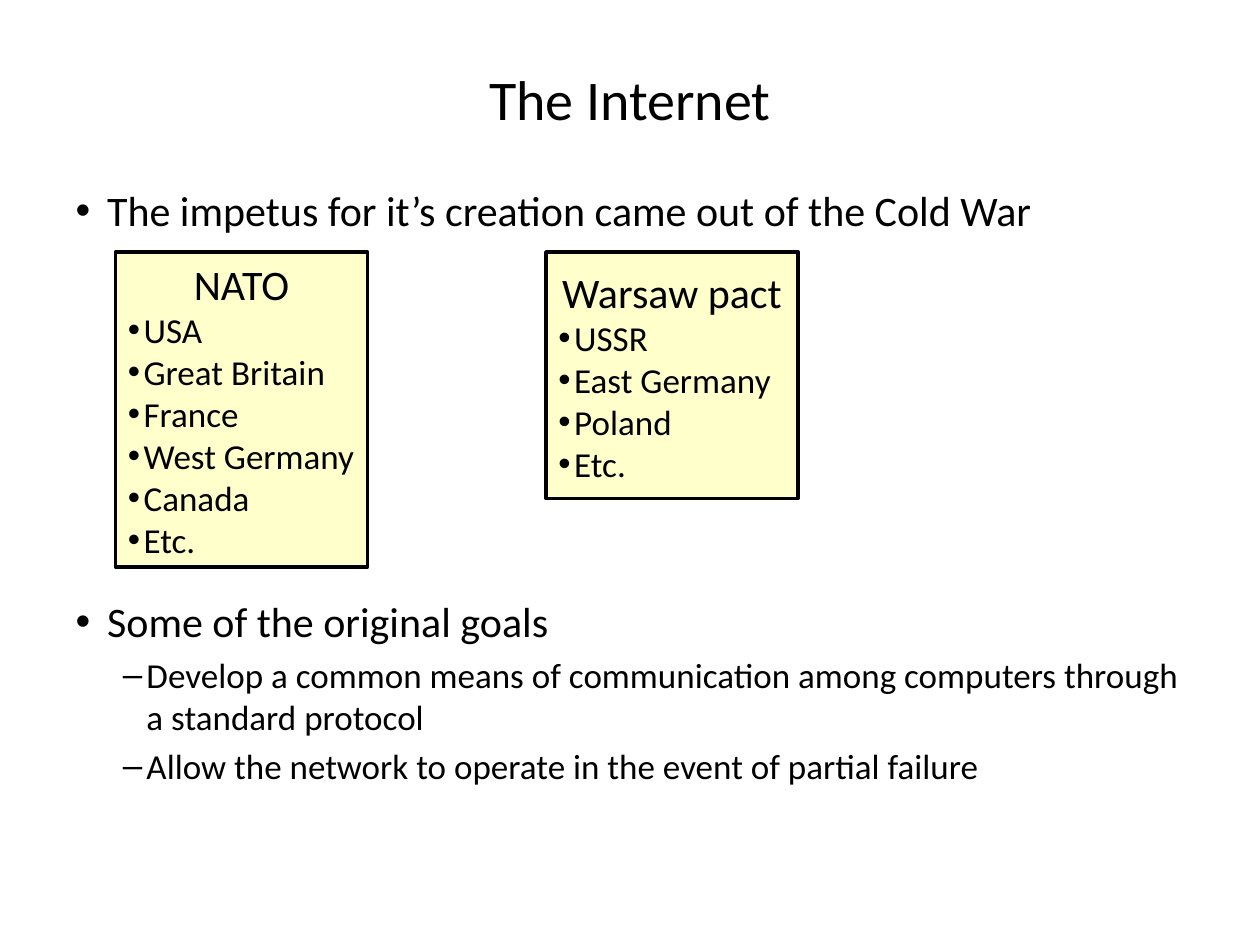
from lxml import etree
from pptx import Presentation
from pptx.dml.color import RGBColor
from pptx.enum.shapes import MSO_SHAPE
from pptx.enum.text import MSO_ANCHOR, MSO_AUTO_SIZE, PP_ALIGN
from pptx.oxml.ns import qn
from pptx.util import Pt

RECT = MSO_SHAPE.RECTANGLE
MIDDLE = MSO_ANCHOR.MIDDLE
NO_FIT = MSO_AUTO_SIZE.NONE
LEFT, CENTER = PP_ALIGN.LEFT, PP_ALIGN.CENTER
FONT = "Calibri"
BLACK, CREAM = "000000", "FFFFCC"


def rgb(value):
    return RGBColor.from_string(value)


def place(sp, box):
    sp.left, sp.top, sp.width, sp.height = (Pt(v) for v in box)


def add_text(tf, text, size=20, align=LEFT, level=0, before=0, left=0, hang=0, bullet=None):
    p = tf.paragraphs[0]
    if p.runs:
        p = tf.add_paragraph()
    p.alignment, p.level, p.space_before = align, level, Pt(before)
    pPr = p._p.get_or_add_pPr()
    pPr.set("marL", str(Pt(left)))
    pPr.set("indent", str(-Pt(hang)))
    if bullet:
        etree.SubElement(pPr, qn("a:buFont")).set("typeface", "Arial")
        etree.SubElement(pPr, qn("a:buChar")).set("char", bullet)
    r = p.add_run()
    r.text = text
    r.font.name, r.font.size = FONT, Pt(size)
    r.font.color.rgb = rgb(BLACK)


def add_title(s, box, text):
    sp = s.shapes.title
    place(sp, box)
    tf = sp.text_frame
    tf.auto_size = NO_FIT
    tf.vertical_anchor = MIDDLE
    add_text(tf, text, size=32, align=CENTER)


def add_body(s, box, items):
    sp = s.placeholders[1]
    place(sp, box)
    tf = sp.text_frame
    tf.auto_size = NO_FIT
    for text, level, before in items:
        if level:
            add_text(tf, text, level=level, before=before, left=40.5, hang=13.5, bullet="–")
        else:
            add_text(tf, text, size=24, before=before, left=18, hang=18, bullet="•")


def add_alliance(s, box, name, members):
    sp = s.shapes.add_shape(RECT, *(Pt(v) for v in box))
    sp.shadow.inherit = False
    sp.fill.solid()
    sp.fill.fore_color.rgb = rgb(CREAM)
    sp.line.color.rgb = rgb(BLACK)
    sp.line.width = Pt(2)
    tf = sp.text_frame
    tf.word_wrap = True
    tf.vertical_anchor = MIDDLE
    add_text(tf, name, size=24, align=CENTER)
    for member in members:
        add_text(tf, member, left=9, hang=9, bullet="•")


def main():
    prs = Presentation()
    prs.slide_width, prs.slide_height = Pt(720), Pt(540)
    s = prs.slides.add_slide(prs.slide_layouts[1])
    add_title(s, (36, 21.6, 648, 68.4), "The Internet")
    add_body(s, (36, 102, 648, 402), [
        ("The impetus for it’s creation came out of the Cold War", 0, 4.8),
        ("Some of the original goals", 0, 206),
        ("Develop a common means of communication among computers "
         "through a standard protocol", 1, 4),
        ("Allow the network to operate in the event of partial failure", 1, 4),
    ])
    add_alliance(s, (66, 144, 144, 180), "NATO",
                 ["USA", "Great Britain", "France", "West Germany", "Canada", "Etc."])
    add_alliance(s, (312, 144, 144, 141), "Warsaw pact",
                 ["USSR", "East Germany", "Poland", "Etc."])
    prs.save("out.pptx")


if __name__ == "__main__":
    main()
